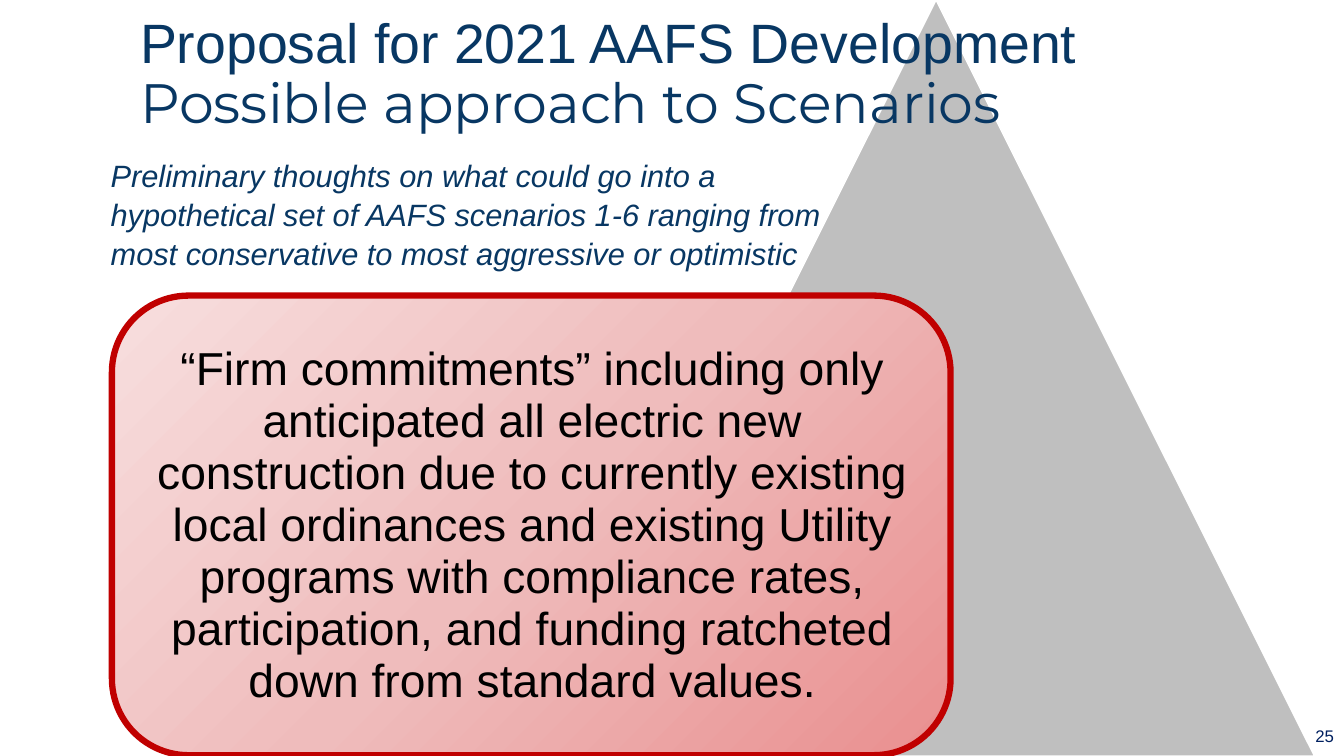
"""Builds the slide on a possible approach to the 2021 AAFS scenarios."""
import pptx
import pptx.dml.color
import pptx.enum.shapes
import pptx.enum.text
import pptx.oxml
import pptx.oxml.ns
import pptx.util

COLORS = {
    "navy": "083763", "number": "002060", "black": "000000", "white": "FFFFFF",
    "gray": "BFBFBF", "red": "C00000",
    "rose": "E98F8F", "pink": "EFBCBC", "blush": "F7DEDE",
}
WIDTH, HEIGHT = 13.33, 7.5
ALIGN = pptx.enum.text.PP_ALIGN
ANCHOR = pptx.enum.text.MSO_ANCHOR
SHAPE = pptx.enum.shapes.MSO_SHAPE


class ScenarioSlide:
    def __init__(self):
        self.deck = pptx.Presentation()
        self.deck.slide_width = pptx.util.Inches(WIDTH)
        self.deck.slide_height = pptx.util.Inches(HEIGHT)
        self.slide = self.deck.slides.add_slide(self.deck.slide_layouts[6])

    def place(self, left, top, width, height):
        across, down = self.deck.slide_width, self.deck.slide_height
        return [round(share * size) for share, size in
                zip((left, top, width, height), (across, down, across, down))]

    def color(self, name):
        return pptx.dml.color.RGBColor.from_string(COLORS[name])

    def shape(self, kind, area, line, weight, fill=None):
        figure = self.slide.shapes.add_shape(kind, *self.place(*area))
        figure.shadow.inherit = False
        figure.line.color.rgb = self.color(line)
        figure.line.width = pptx.util.Pt(weight)
        if fill:
            figure.fill.solid()
            figure.fill.fore_color.rgb = self.color(fill)
        return figure

    def glow(self, figure, stops):
        marks = "".join(
            f'<a:gs pos="{position * 1000}"><a:srgbClr val="{COLORS[name]}"/></a:gs>'
            for position, name in stops)
        gradient = pptx.oxml.parse_xml(
            f'<a:gradFill {pptx.oxml.ns.nsdecls("a")} rotWithShape="1">'
            f'<a:gsLst>{marks}</a:gsLst><a:path path="circle">'
            '<a:fillToRect l="100000" t="100000"/></a:path></a:gradFill>')
        figure.element.spPr.find(pptx.oxml.ns.qn("a:prstGeom")).addnext(gradient)

    def text(self, area, words, size, color, fonts=("Arial",), align=ALIGN.LEFT,
             anchor=ANCHOR.MIDDLE, spacing=1.0, italic=False, inset=None):
        frame = self.slide.shapes.add_textbox(*self.place(*area)).text_frame
        frame.word_wrap = True
        frame.vertical_anchor = anchor
        if inset:
            frame.margin_left = frame.margin_right = pptx.util.Inches(inset)
            frame.margin_top = frame.margin_bottom = pptx.util.Inches(inset)
        paragraph = frame.paragraphs[0]
        paragraph.text = words
        paragraph.alignment = align
        paragraph.line_spacing = spacing
        for run, font in zip(paragraph.runs, fonts):
            run.font.name = font
            run.font.size = pptx.util.Pt(size)
            run.font.italic = italic
            run.font.color.rgb = self.color(color)


def main():
    page = ScenarioSlide()
    page.text((0.856, 0.947, 0.144, 0.053), "25", 12, "number", align=ALIGN.RIGHT)
    page.shape(SHAPE.ISOSCELES_TRIANGLE, (0.415, 0, 0.563, 1), "white", 1, "gray")
    commitments = page.shape(
        SHAPE.ROUNDED_RECTANGLE, (0.0833, 0.391, 0.624, 0.608), "red", 4.5)
    page.glow(commitments, [(0, "rose"), (50, "pink"), (100, "blush")])
    page.text(
        (0.1005, 0.421, 0.591, 0.549),
        "“Firm commitments” including only anticipated all electric new "
        "construction due to currently existing local ordinances and existing "
        "Utility programs with compliance rates, participation, and funding "
        "ratcheted down from standard values.",
        33, "black", align=ALIGN.CENTER, spacing=0.94, inset=0.14)
    page.text(
        (0.0968, 0.024, 0.869, 0.152),
        "Proposal for 2021 AAFS Development\vPossible approach to Scenarios",
        39.6, "navy", fonts=("Arial", "Montserrat"), spacing=0.9)
    page.text(
        (0.075, 0.199, 0.548, 0.2),
        "Preliminary thoughts on what could go into a hypothetical set of AAFS "
        "scenarios 1-6 ranging from most conservative to most aggressive or "
        "optimistic",
        22, "navy", anchor=ANCHOR.TOP, spacing=1.05, italic=True)
    page.deck.save("out.pptx")


if __name__ == "__main__":
    main()
